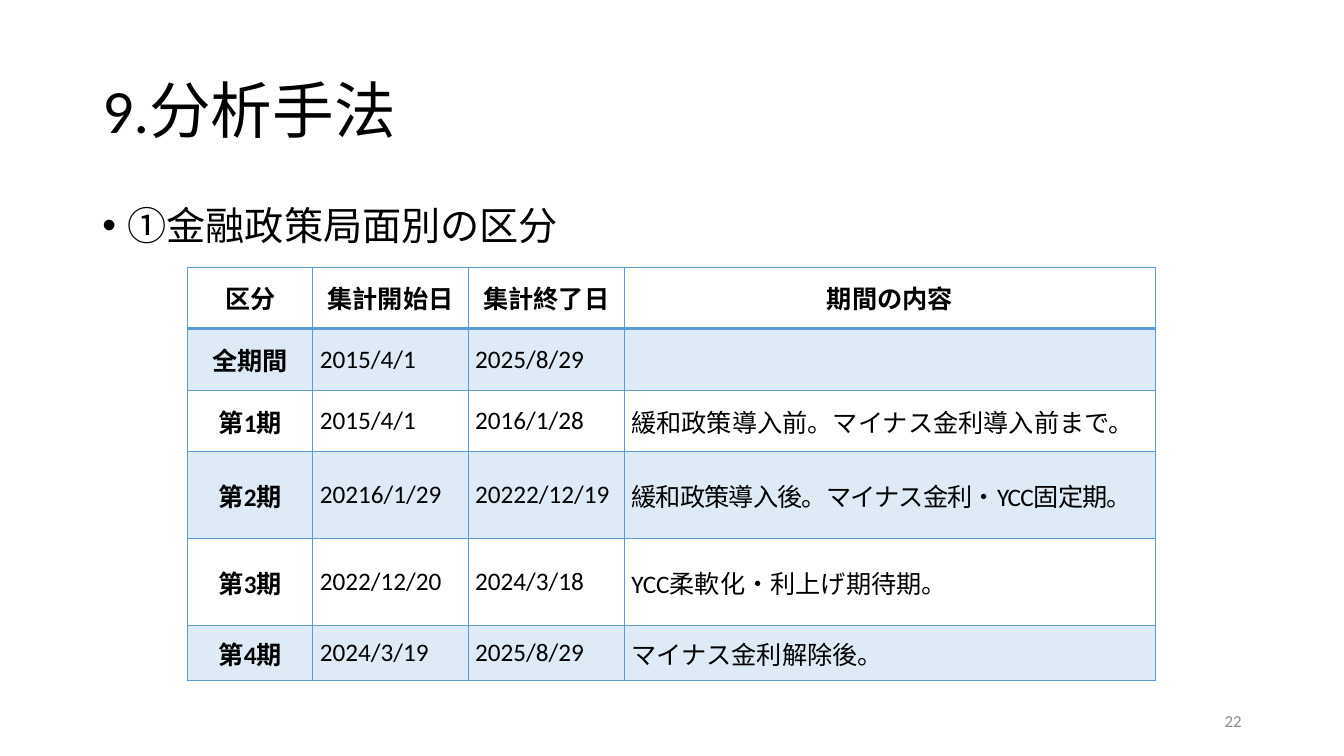
"""Build the slide that splits the sample into monetary policy periods."""
from dataclasses import dataclass

from lxml.etree import SubElement
from pptx import Presentation
from pptx.dml.color import RGBColor as Color
from pptx.enum.text import MSO_ANCHOR as Anchor, PP_ALIGN as Align
from pptx.oxml import parse_xml
from pptx.oxml.ns import nsdecls, qn
from pptx.util import Pt

TITLE = "9.分析手法"
SUBTITLE = "①金融政策局面別の区分"
PAGE_NUMBER = "22"
HEADER = ("区分", "集計開始日", "集計終了日", "期間の内容")
PERIODS = [
    ("全期間", "2015/4/1", "2025/8/29", ""),
    ("第1期", "2015/4/1", "2016/1/28", "緩和政策導入前。マイナス金利導入前まで。"),
    ("第2期", "20216/1/29", "20222/12/19", "緩和政策導入後。マイナス金利・YCC固定期。"),
    ("第3期", "2022/12/20", "2024/3/18", "YCC柔軟化・利上げ期待期。"),
    ("第4期", "2024/3/19", "2025/8/29", "マイナス金利解除後。"),
]
COLUMN_WIDTHS = (89.3, 110.9, 111.6, 379.4)
ROW_HEIGHTS = (44, 44, 44, 62, 62, 39.5)


@dataclass(frozen=True)
class Theme:
    font: str = "Calibri"
    ink: str = "000000"
    muted: str = "8C8C8C"
    accent: str = "5B9BD5"
    band_alpha: int = 20000
    title: int = 44
    subtitle: int = 28
    cell: int = 18
    number: int = 12
    line: int = 1
    header_line: int = 2
    cell_margin: int = 5
    full_line: int = 20
    tight_spacing: int = -60


THEME = Theme()


def place(box, left, top, width, height):
    box.left, box.top = Pt(left), Pt(top)
    box.width, box.height = Pt(width), Pt(height)


def write(frame, text, size, color=THEME.ink, align=Align.LEFT, bold=False):
    para = frame.paragraphs[0]
    para.alignment = align
    span = para.add_run()
    span.text = text
    span.font.name, span.font.size, span.font.bold = THEME.font, Pt(size), bold
    span.font.color.rgb = Color.from_string(color)
    if len(text) > THEME.full_line:
        span._r.get_or_add_rPr().set("spc", str(THEME.tight_spacing))
    return para


def add_text_box(page, left, top, width, height, anchor):
    frame = page.shapes.add_textbox(Pt(left), Pt(top), Pt(width), Pt(height)).text_frame
    frame.word_wrap = True
    frame.vertical_anchor = anchor
    return frame


def add_bullet(para, indent):
    props = para._p.get_or_add_pPr()
    props.set("marL", str(Pt(indent)))
    props.set("indent", str(-Pt(indent)))
    SubElement(props, qn("a:buFont")).set("typeface", "Arial")
    SubElement(props, qn("a:buChar")).set("char", "•")


def fill_cell(cell, banded):
    if not banded:
        cell.fill.background()
        return
    cell.fill.solid()
    cell.fill.fore_color.rgb = Color.from_string(THEME.accent)
    color = cell._tc.tcPr.find(".//" + qn("a:srgbClr"))
    SubElement(color, qn("a:alpha")).set("val", str(THEME.band_alpha))


def draw_borders(cell, top, bottom):
    widths = {"lnL": THEME.line, "lnR": THEME.line, "lnT": top, "lnB": bottom}
    for position, (side, width) in enumerate(widths.items()):
        cell._tc.tcPr.insert(position, parse_xml(
            f'<a:{side} {nsdecls("a")} w="{Pt(width)}"><a:solidFill>'
            f'<a:srgbClr val="{THEME.accent}"/></a:solidFill></a:{side}>'))


def add_period_table(page, left, top):
    rows = [HEADER, *PERIODS]
    table = page.shapes.add_table(
        len(rows), len(HEADER), Pt(left), Pt(top),
        Pt(sum(COLUMN_WIDTHS)), Pt(sum(ROW_HEIGHTS))).table
    table.first_row = table.horz_banding = False
    for column, width in zip(table.columns, COLUMN_WIDTHS):
        column.width = Pt(width)
    for row, height in zip(table.rows, ROW_HEIGHTS):
        row.height = Pt(height)
    for i, texts in enumerate(rows):
        for j, text in enumerate(texts):
            cell = table.cell(i, j)
            heading = i == 0 or j == 0
            cell.vertical_anchor = Anchor.MIDDLE
            cell.margin_left = cell.margin_right = Pt(THEME.cell_margin)
            cell.margin_top = cell.margin_bottom = 0
            if text:
                write(cell.text_frame, text, THEME.cell, bold=heading,
                      align=Align.CENTER if heading else Align.JUSTIFY)
            fill_cell(cell, i % 2 == 1)
            draw_borders(cell,
                         THEME.header_line if i == 1 else THEME.line,
                         THEME.header_line if i == 0 else THEME.line)


def main():
    deck = Presentation()
    deck.slide_width, deck.slide_height = Pt(960), Pt(540)
    page = deck.slides.add_slide(deck.slide_layouts[5])

    title = page.shapes.title
    place(title, 66, 28.8, 828, 104.4)
    title.text_frame.vertical_anchor = Anchor.MIDDLE
    write(title.text_frame, TITLE, THEME.title).line_spacing = 0.9

    body = add_text_box(page, 66, 144, 828, 44, Anchor.TOP)
    add_bullet(body.paragraphs[0], 18)
    write(body, SUBTITLE, THEME.subtitle).line_spacing = 0.9

    add_period_table(page, 134.2, 190.8)

    number = add_text_box(page, 678, 500.5, 216, 28.8, Anchor.MIDDLE)
    write(number, PAGE_NUMBER, THEME.number, THEME.muted, Align.RIGHT)
    deck.save("out.pptx")


if __name__ == "__main__":
    main()
